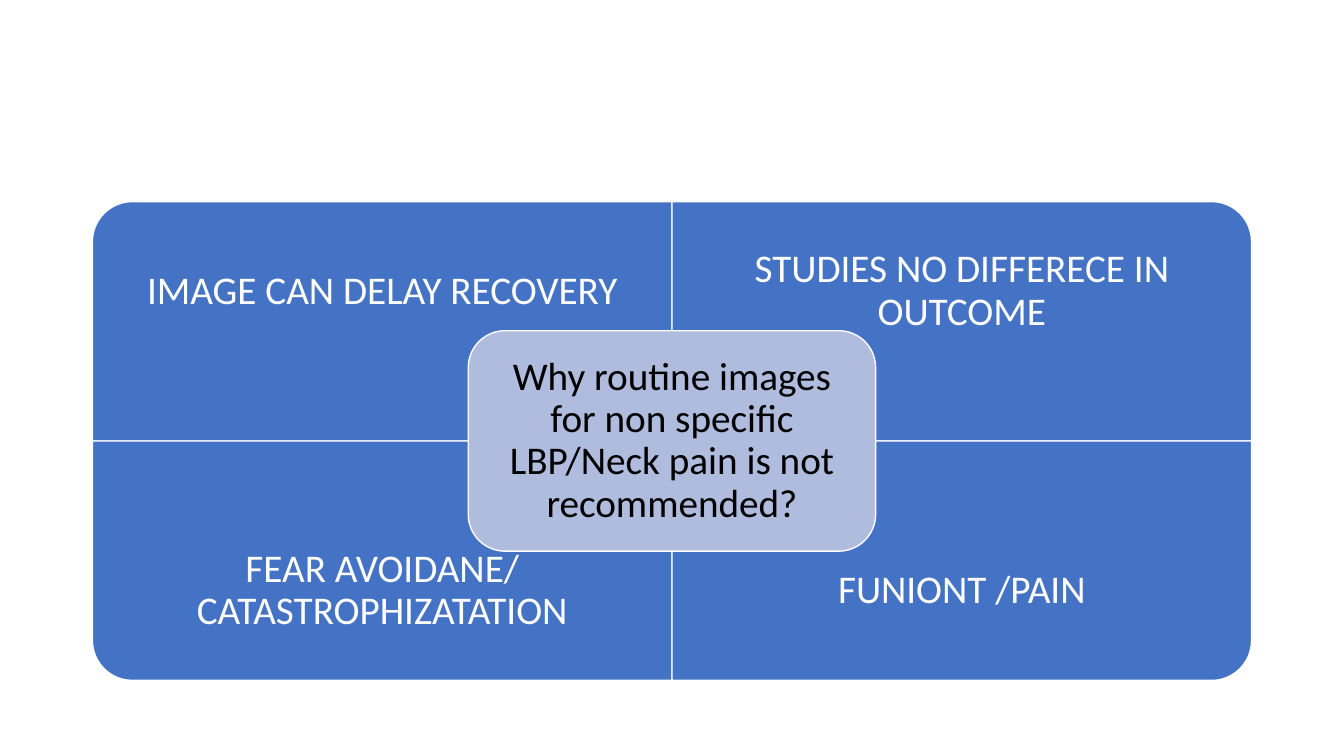
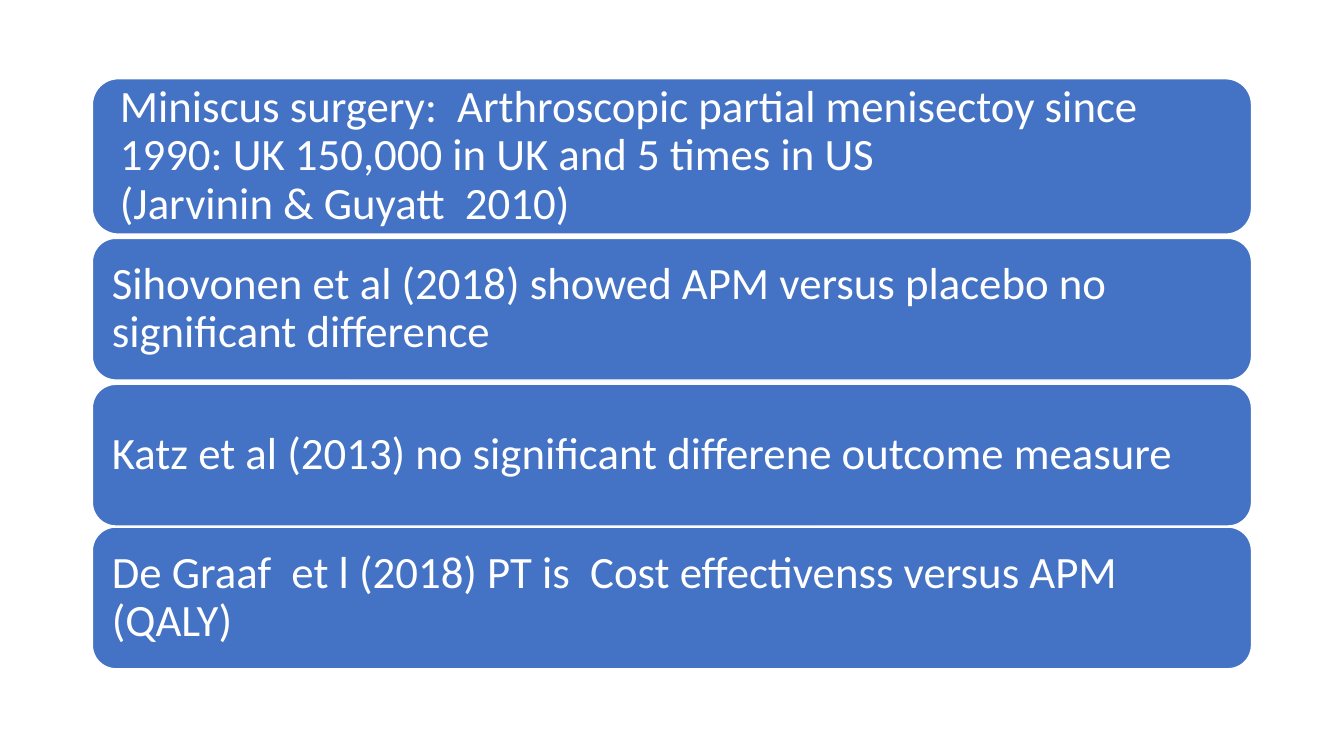
from pptx import Presentation
from pptx.dml.color import RGBColor as RGB
from pptx.enum.shapes import MSO_SHAPE as SHAPE
from pptx.enum.text import MSO_ANCHOR as ANCHOR, PP_ALIGN as ALIGN
from pptx.util import Emu, Pt

# Shared scale, colours and content column
PX = 9525
SLIDE_W, SLIDE_H = 1280, 720
LEFT, WIDTH = 88, 1104
FONT = "Calibri"
COLORS = {"blue": "4472C4", "pale": "B0BCDE", "white": "FFFFFF", "black": "000000"}


def px(n):
    return Emu(round(n * PX))


def rgb(name):
    return RGB.from_string(COLORS[name])


def set_text(sp, text, size=28, color="white", align=ALIGN.CENTER, inset=(12, 12)):
    """Write one paragraph, centred vertically; \\v is a line break."""
    tf = sp.text_frame
    tf.word_wrap = True
    tf.vertical_anchor = ANCHOR.MIDDLE
    tf.margin_left = tf.margin_right = px(inset[0])
    tf.margin_top = tf.margin_bottom = px(inset[1])
    p = tf.paragraphs[0]
    p.text = text
    p.alignment = align
    p.line_spacing = 0.9
    for r in p.runs:
        r.font.name = FONT
        r.font.size = Pt(size)
        r.font.color.rgb = rgb(color)


def add_panel(slide, kind, x, y, w, h, fill="blue"):
    sp = slide.shapes.add_shape(kind, px(x), px(y), px(w), px(h))
    sp.shadow.inherit = False
    sp.fill.solid()
    sp.fill.fore_color.rgb = rgb(fill)
    sp.line.color.rgb = rgb("white")
    sp.line.width = Pt(1)
    return sp


def add_quadrant(slide, x, y, w, h, rotation):
    """Panel whose single round corner is turned outwards."""
    sw, sh = (h, w) if rotation % 180 else (w, h)
    sp = add_panel(slide, SHAPE.ROUND_1_RECTANGLE,
                   x + (w - sw) / 2, y + (h - sh) / 2, sw, sh)
    sp.rotation = rotation


def add_label(slide, text, x, y, w, h, **fmt):
    set_text(slide.shapes.add_textbox(px(x), px(y), px(w), px(h)), text, **fmt)


def build_reasons(slide):
    top, w, h, label_h = 192, WIDTH // 2, 228, 171
    quadrants = [
        ("IMAGE CAN DELAY RECOVERY", 270),
        ("STUDIES NO DIFFERECE IN OUTCOME", 0),
        ("FEAR AVOIDANE/ CATASTROPHIZATATION", 180),
        ("FUNIONT /PAIN", 90),
    ]
    for i, (text, rotation) in enumerate(quadrants):
        row, col = divmod(i, 2)
        x, y = LEFT + col * w, top + row * h
        add_quadrant(slide, x, y, w, h, rotation)
        # Labels keep to the outer edge, clear of the centre panel
        add_label(slide, text, x, y + row * (h - label_h), w, label_h, inset=(21, 21))

    # Centre question
    cw, ch = 388, 210
    sp = add_panel(slide, SHAPE.ROUNDED_RECTANGLE,
                   LEFT + w - cw // 2, top + h - ch // 2, cw, ch, fill="pale")
    set_text(sp, "Why routine images for non specific LBP/Neck pain is not recommended?",
             color="black")


def build_studies(slide):
    # Top, height, side inset, text
    bars = [
        (75, 148, 19, "Miniscus surgery:  Arthroscopic partial menisectoy since 1990: "
                      "UK 150,000 in UK and 5 times in US\v(Jarvinin & Guyatt  2010)"),
        (227, 135, 12, "Sihovonen et al (2018) showed APM versus placebo no "
                       "significant difference"),
        (366, 135, 12, "Katz et al (2013) no significant differene outcome measure"),
        (502, 135, 12, "De Graaf  et l (2018) PT is  Cost effectivenss versus APM (QALY)"),
    ]
    for top, height, side, text in bars:
        sp = add_panel(slide, SHAPE.ROUNDED_RECTANGLE, LEFT, top, WIDTH, height)
        set_text(sp, text, size=32, align=ALIGN.LEFT, inset=(side, 12))


def main():
    prs = Presentation()
    prs.slide_width, prs.slide_height = px(SLIDE_W), px(SLIDE_H)
    for build in (build_reasons, build_studies):
        build(prs.slides.add_slide(prs.slide_layouts[6]))
    prs.save("out.pptx")


if __name__ == "__main__":
    main()
